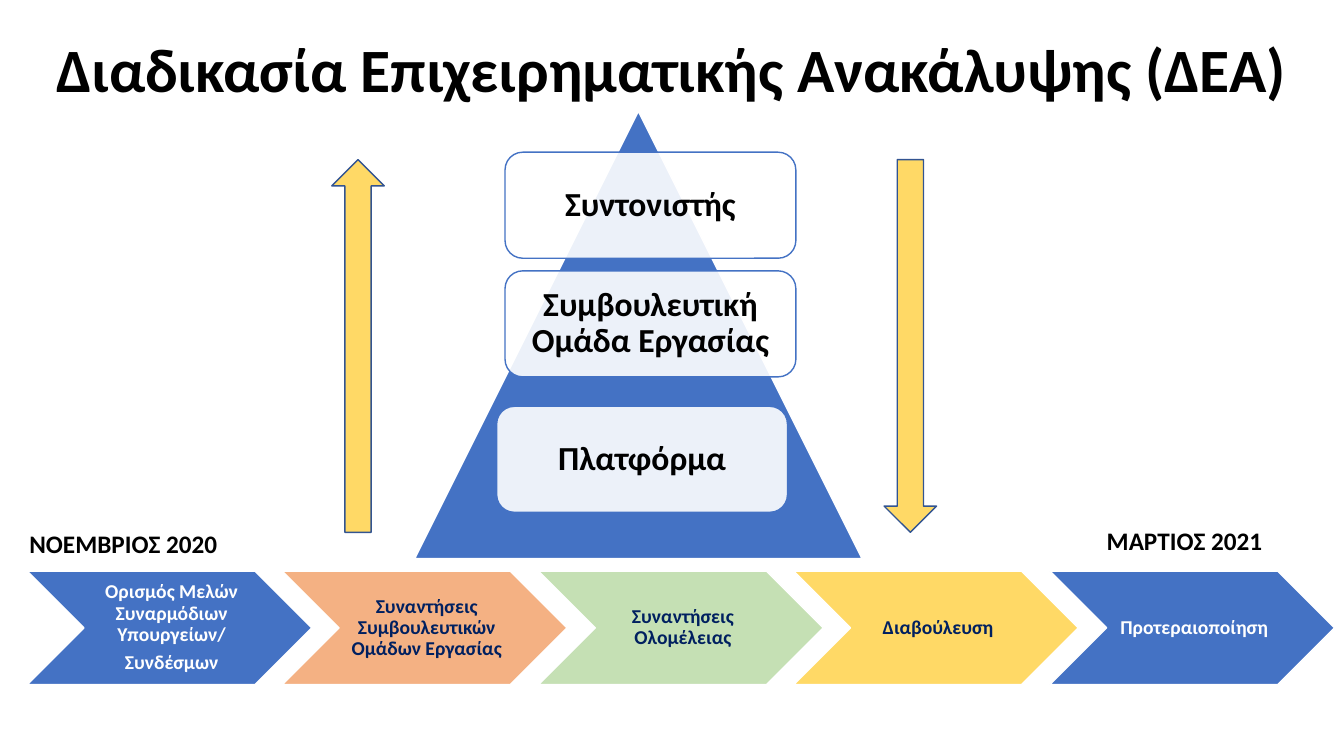
from lxml.etree import SubElement
from pptx import Presentation
from pptx.dml.color import RGBColor
from pptx.enum.shapes import MSO_SHAPE
from pptx.enum.text import MSO_ANCHOR, MSO_AUTO_SIZE, PP_ALIGN
from pptx.oxml.ns import qn
from pptx.util import Pt

PX = 9525  # EMU per px, 96 px to the inch
BLUE, ORANGE, GREEN, YELLOW = "4472C4", "F4B183", "C5E0B4", "FFD966"
WHITE, BLACK, NAVY, OUTLINE = "FFFFFF", "000000", "002060", "325491"


def write(shape, text, size, color=BLACK, align=PP_ALIGN.CENTER, spacing=0.9,
          after=0, insets=(10, 5, 10, 5), wrap=True):
    frame = shape.text_frame
    frame.text = text
    frame.word_wrap = wrap
    frame.auto_size = MSO_AUTO_SIZE.NONE if wrap else MSO_AUTO_SIZE.SHAPE_TO_FIT_TEXT
    frame.vertical_anchor = MSO_ANCHOR.MIDDLE if wrap else MSO_ANCHOR.TOP
    (frame.margin_left, frame.margin_top,
     frame.margin_right, frame.margin_bottom) = [inset * PX for inset in insets]
    for paragraph in frame.paragraphs:
        paragraph.alignment = align
        paragraph.line_spacing = spacing
        paragraph.space_before = Pt(0)
        paragraph.space_after = Pt(after)
        font = paragraph.runs[0].font
        font.name, font.size, font.bold = "Calibri", Pt(size), True
        font.color.rgb = RGBColor.from_string(color)


def draw(preset, left, top, width, height, fill, line):
    shape = slide.shapes.add_shape(preset, left * PX, top * PX, width * PX, height * PX)
    shape.shadow.inherit = False
    shape.fill.solid()
    shape.fill.fore_color.rgb = RGBColor.from_string(fill)
    shape.line.color.rgb = RGBColor.from_string(line)
    shape.line.width = Pt(1)
    return shape


prs = Presentation()
prs.slide_width, prs.slide_height = 1280 * PX, 720 * PX
slide = prs.slides.add_slide(prs.slide_layouts[5])

# Title
title = slide.shapes.title
title.left, title.top, title.width, title.height = 0, 0, 1280 * PX, 139 * PX
write(title, "Διαδικασία Επιχειρηματικής Ανακάλυψης (ΔΕΑ)", 44)

# Pyramid with its three translucent levels
draw(MSO_SHAPE.ISOSCELES_TRIANGLE, 395, 106, 426, 426, BLUE, WHITE)
levels = [
    ("Συντονιστής", 481, 145),
    ("Συμβουλευτική Ομάδα Εργασίας", 481, 258),
    ("Πλατφόρμα", 473, 387),
]
for name, left, top in levels:
    level = draw(MSO_SHAPE.ROUNDED_RECTANGLE, left, top, 277, 101, WHITE, BLUE)
    white = level.fill._xPr.find(qn("a:solidFill"))[0]
    SubElement(white, qn("a:alpha"), val="90000")
    write(level, name, 24, after=10, insets=(10, 10, 10, 10))

# Upward and downward arrows
for left, rotation in [(316, 0), (842, 180)]:
    flow = draw(MSO_SHAPE.UP_ARROW, left, 152, 50, 355, YELLOW, OUTLINE)
    flow.rotation = rotation

# Timeline steps, evenly spread from the first to the last left edge
steps = [
    ("Ορισμός Μελών Συναρμόδιων Υπουργείων/\nΣυνδέσμων", BLUE, WHITE),
    ("Συναντήσεις Συμβουλευτικών Ομάδων Εργασίας", ORANGE, NAVY),
    ("Συναντήσεις Ολομέλειας", GREEN, NAVY),
    ("Διαβούλευση", YELLOW, NAVY),
    ("Προτεραιοποίηση", BLUE, WHITE),
]
first_left, last_left = 26, 1000
for index, (name, fill, color) in enumerate(steps):
    left = first_left + index * (last_left - first_left) // (len(steps) - 1)
    step = draw(MSO_SHAPE.CHEVRON, left, 544, 271, 108, fill, WHITE)
    write(step, name, 14, color=color, after=5, insets=(6, 2, 2, 2))

# Start and end dates
for date, left, top, width in [("ΝΟΕΜΒΡΙΟΣ 2020", 18, 498, 200),
                               ("ΜΑΡΤΙΟΣ 2021", 1044, 495, 169)]:
    label = slide.shapes.add_textbox(left * PX, top * PX, width * PX, 38 * PX)
    write(label, date, 18, align=PP_ALIGN.LEFT, spacing=1.0, wrap=False)

prs.save("out.pptx")
